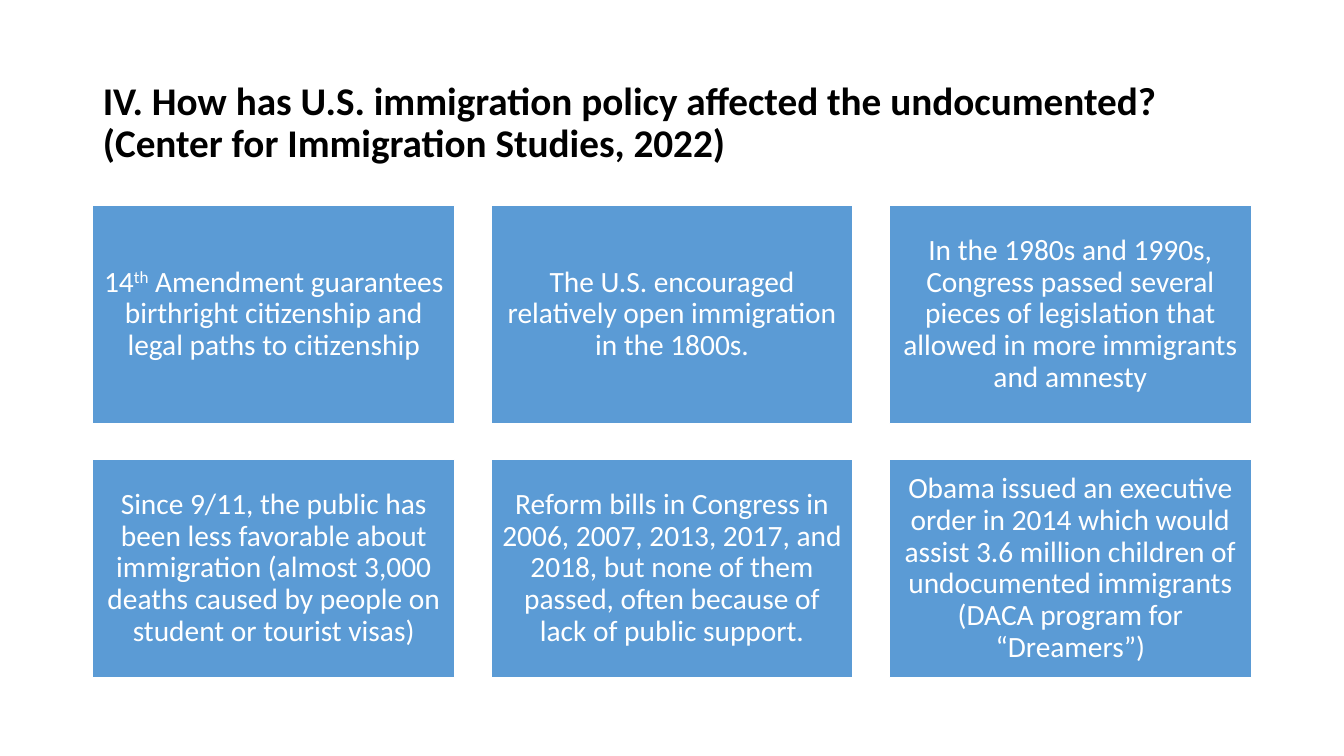
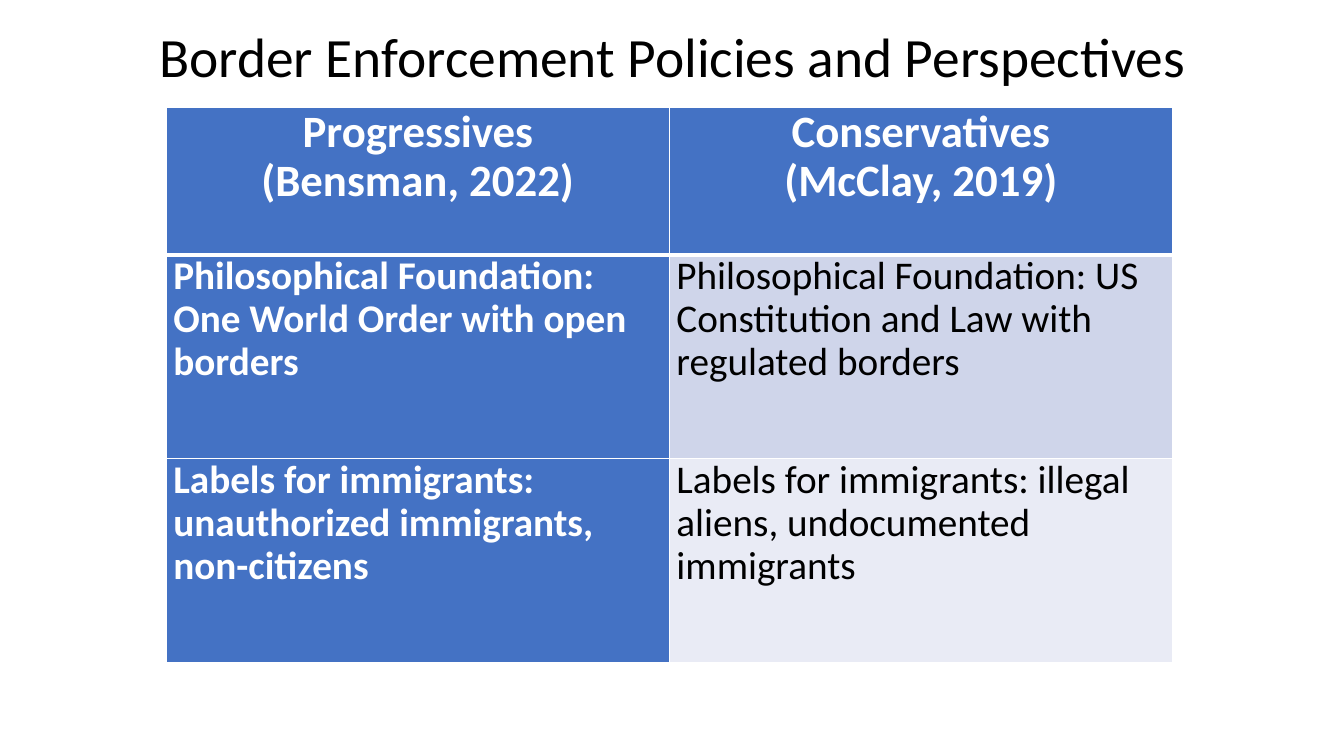
from lxml.etree import SubElement
from pptx import Presentation
from pptx.dml.color import RGBColor
from pptx.enum.shapes import MSO_SHAPE
from pptx.enum.text import MSO_ANCHOR, MSO_AUTO_SIZE, PP_ALIGN
from pptx.oxml.ns import qn
from pptx.util import Inches, Pt

# Shared style
FONT = "Calibri"
LINE_SPACING = 0.9
BLACK = RGBColor(0x00, 0x00, 0x00)
WHITE = RGBColor(0xFF, 0xFF, 0xFF)
CARD_BLUE = RGBColor(0x5B, 0x9B, 0xD5)
HEADER_BLUE = RGBColor(0x44, 0x72, 0xC4)
BAND_DARK = RGBColor(0xCF, 0xD5, 0xEA)
BAND_LIGHT = RGBColor(0xE9, 0xEB, 0xF5)
SLIDE_WIDTH, SLIDE_HEIGHT = 13.33, 7.5
MARGIN = 0.92
CONTENT_WIDTH = 11.5

# Content: each milestone is a list of (text, is superscript)
POLICY_TITLE = ("IV. How has U.S. immigration policy affected the undocumented? "
                "(Center for Immigration Studies, 2022)")
MILESTONES = [
    [("14", False), ("th", True),
     (" Amendment guarantees birthright citizenship and legal paths to citizenship", False)],
    [("The U.S. encouraged relatively open immigration in the 1800s.", False)],
    [("In the 1980s and 1990s, Congress passed several pieces of legislation "
      "that allowed in more immigrants and amnesty", False)],
    [("Since 9/11, the public has been less favorable about immigration "
      "(almost 3,000 deaths caused by people on student or tourist visas)", False)],
    [("Reform bills in Congress in 2006, 2007, 2013, 2017, and 2018, but none of "
      "them passed, often because of lack of public support.", False)],
    [("Obama issued an executive order in 2014 which would assist 3.6 million children "
      "of undocumented immigrants (DACA program for “Dreamers”)", False)],
]
BORDER_TITLE = "Border Enforcement Policies and Perspectives"
PERSPECTIVES = [
    (["Progressives", "(Bensman, 2022)"], ["Conservatives", "(McClay, 2019)"]),
    (["Philosophical Foundation: One World Order with open borders"],
     ["Philosophical Foundation: US Constitution and Law with regulated borders"]),
    (["Labels for immigrants: unauthorized immigrants, non-citizens"],
     ["Labels for immigrants: illegal aliens, undocumented immigrants"]),
]

# Card grid
CARD_COLUMNS = 3
CARD_TOP = 2.04
CARD_WIDTH, CARD_HEIGHT = 3.59, 2.16
CARD_GAP = 0.36

# Perspectives table
TABLE_LEFT, TABLE_TOP = 1.65, 1.07
COLUMN_WIDTH = 4.99
ROW_HEIGHTS = [1.46, 2.02, 2.02]
ROW_BANDS = [HEADER_BLUE, BAND_DARK, BAND_LIGHT]


def add_run(paragraph, text, size, color, bold=False, superscript=False):
    run = paragraph.add_run()
    run.text = text
    font = run.font
    font.name, font.size, font.bold = FONT, Pt(size), bold
    font.color.rgb = color
    if superscript:
        run._r.get_or_add_rPr().set("baseline", "30000")


def format_paragraph(paragraph, align):
    paragraph.alignment = align
    paragraph.line_spacing = LINE_SPACING


def add_titled_slide(deck, title, top, height, size, align, bold=False):
    slide = deck.slides.add_slide(deck.slide_layouts[5])
    heading = slide.shapes.title
    heading.left, heading.top = Inches(MARGIN), Inches(top)
    heading.width, heading.height = Inches(CONTENT_WIDTH), Inches(height)
    frame = heading.text_frame
    frame.auto_size = MSO_AUTO_SIZE.NONE
    frame.vertical_anchor = MSO_ANCHOR.MIDDLE
    format_paragraph(frame.paragraphs[0], align)
    add_run(frame.paragraphs[0], title, size, BLACK, bold)
    return slide


def add_card(slide, index, pieces):
    row, column = divmod(index, CARD_COLUMNS)
    card = slide.shapes.add_shape(
        MSO_SHAPE.RECTANGLE,
        Inches(MARGIN + column * (CARD_WIDTH + CARD_GAP)),
        Inches(CARD_TOP + row * (CARD_HEIGHT + CARD_GAP)),
        Inches(CARD_WIDTH), Inches(CARD_HEIGHT))
    card.shadow.inherit = False
    card.fill.solid()
    card.fill.fore_color.rgb = CARD_BLUE
    card.line.color.rgb = WHITE
    card.line.width = Pt(1)
    frame = card.text_frame
    frame.word_wrap = True
    frame.vertical_anchor = MSO_ANCHOR.MIDDLE
    frame.margin_left = frame.margin_right = Inches(0.09)
    frame.margin_top = frame.margin_bottom = Inches(0.09)
    format_paragraph(frame.paragraphs[0], PP_ALIGN.CENTER)
    for text, superscript in pieces:
        add_run(frame.paragraphs[0], text, 21, WHITE, superscript=superscript)


def set_borders(cell, widths):
    """Draw white borders; they must come before the fill in the cell's XML."""
    properties = cell._tc.get_or_add_tcPr()
    for position, (side, width) in enumerate(widths.items()):
        border = SubElement(properties, qn(f"a:ln{side}"), w=str(Pt(width)))
        fill = SubElement(border, qn("a:solidFill"))
        SubElement(fill, qn("a:srgbClr"), val=str(WHITE))
        properties.insert(position, border)


def fill_cell(cell, lines, row, column):
    is_header = row == 0
    emphasized = is_header or column == 0
    cell.fill.solid()
    cell.fill.fore_color.rgb = HEADER_BLUE if emphasized else ROW_BANDS[row]
    cell.margin_left = cell.margin_right = Inches(0.07)
    cell.margin_top = cell.margin_bottom = 0
    cell.vertical_anchor = MSO_ANCHOR.TOP
    set_borders(cell, {"L": 1, "R": 1, "T": 3 if row == 1 else 1, "B": 3 if is_header else 1})
    frame = cell.text_frame
    for number, line in enumerate(lines):
        paragraph = frame.add_paragraph() if number else frame.paragraphs[0]
        format_paragraph(paragraph, PP_ALIGN.CENTER if is_header else PP_ALIGN.LEFT)
        add_run(paragraph, line, 32 if is_header else 28,
                WHITE if emphasized else BLACK, emphasized)


def add_perspectives(slide):
    columns = len(PERSPECTIVES[0])
    table = slide.shapes.add_table(
        len(PERSPECTIVES), columns, Inches(TABLE_LEFT), Inches(TABLE_TOP),
        Inches(columns * COLUMN_WIDTH), Inches(sum(ROW_HEIGHTS))).table
    for column in table.columns:
        column.width = Inches(COLUMN_WIDTH)
    for row, cells in enumerate(PERSPECTIVES):
        table.rows[row].height = Inches(ROW_HEIGHTS[row])
        for column, lines in enumerate(cells):
            fill_cell(table.cell(row, column), lines, row, column)


def main():
    deck = Presentation()
    deck.slide_width, deck.slide_height = Inches(SLIDE_WIDTH), Inches(SLIDE_HEIGHT)

    # Immigration policy milestones
    policy = add_titled_slide(deck, POLICY_TITLE, 0.61, 1.24, 28, PP_ALIGN.LEFT, bold=True)
    for index, pieces in enumerate(MILESTONES):
        add_card(policy, index, pieces)

    # Border enforcement perspectives
    border = add_titled_slide(deck, BORDER_TITLE, 0.28, 0.62, 39.6, PP_ALIGN.CENTER)
    add_perspectives(border)

    deck.save("out.pptx")


if __name__ == "__main__":
    main()
